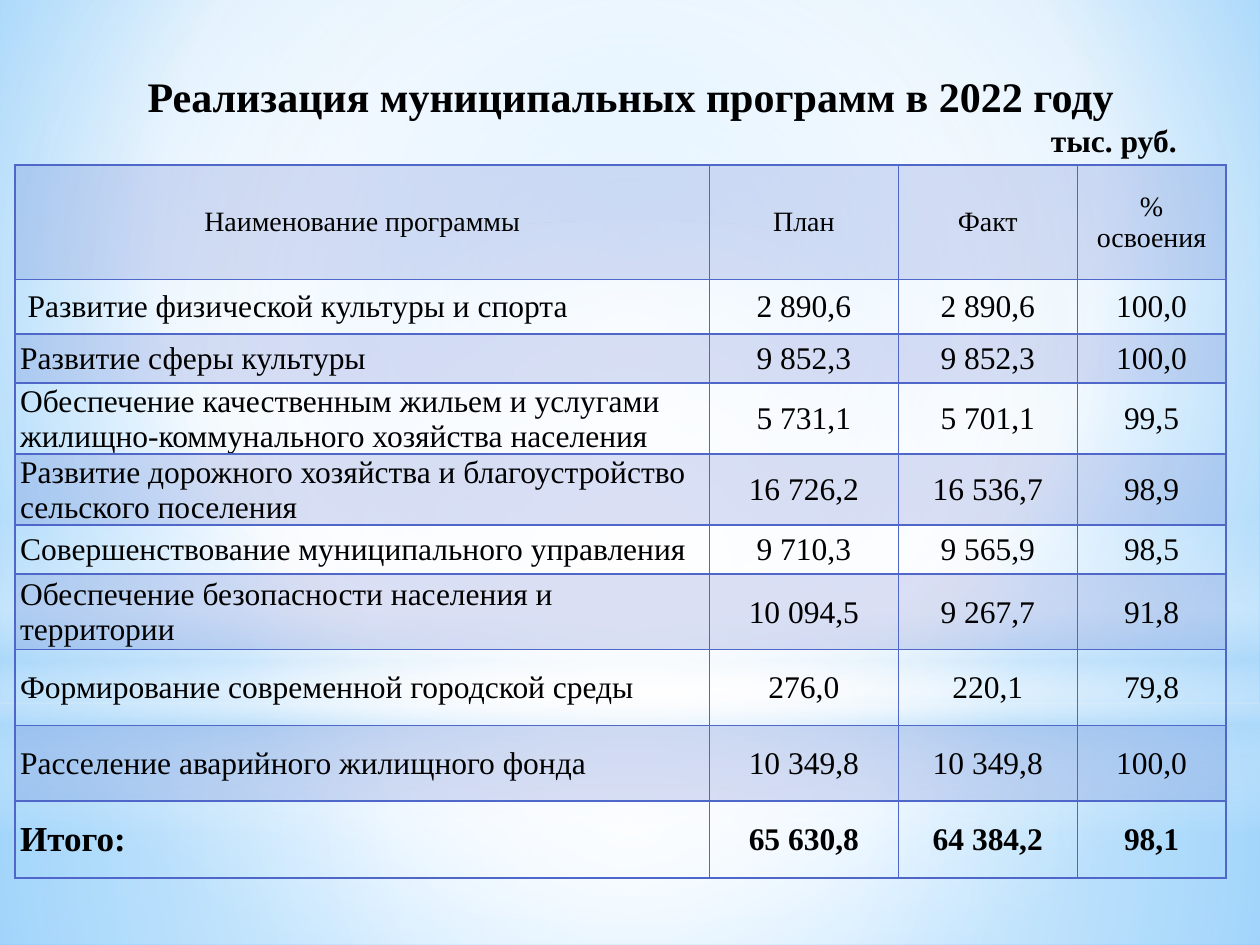
"""Build a slide with a table of municipal programme spending for 2022."""
from lxml.etree import SubElement
from pptx import Presentation
from pptx.dml.color import RGBColor
from pptx.enum.shapes import MSO_SHAPE
from pptx.enum.text import MSO_ANCHOR, MSO_AUTO_SIZE, PP_ALIGN
from pptx.oxml import parse_xml
from pptx.oxml.ns import nsdecls, qn
from pptx.util import Inches, Pt

THEME = {
    "font": "Times New Roman", "ink": "000000", "line": "4E67C8", "band": 20,
    "title": 24, "head": 16, "body": 18, "total": 20,
}
TITLE = "Реализация муниципальных программ в 2022 году"
UNIT = "тыс. руб."
ROWS = [
    ("Наименование программы", "План", "Факт", "% освоения"),
    ("Развитие физической культуры и спорта", "2 890,6", "2 890,6", "100,0"),
    ("Развитие сферы культуры", "9 852,3", "9 852,3", "100,0"),
    ("Обеспечение качественным жильем и услугами жилищно-коммунального хозяйства населения",
     "5 731,1", "5 701,1", "99,5"),
    ("Развитие дорожного хозяйства и благоустройство сельского поселения",
     "16 726,2", "16 536,7", "98,9"),
    ("Совершенствование муниципального управления", "9 710,3", "9 565,9", "98,5"),
    ("Обеспечение безопасности населения и территории", "10 094,5", "9 267,7", "91,8"),
    ("Формирование современной городской среды", "276,0", "220,1", "79,8"),
    ("Расселение аварийного жилищного фонда", "10 349,8", "10 349,8", "100,0"),
    ("Итого:", "65 630,8", "64 384,2", "98,1"),
]
WIDTHS = [5.51, 1.5, 1.42, 1.18]
HEIGHTS = [0.91, 0.43, 0.39, 0.46, 0.46, 0.39, 0.6, 0.6, 0.6, 0.61]
MID = (50, 50, 50, 50)
SKY = ([(0, "9ED5FF", 100), (60, "FFFFFF", 100), (100, "5BB9FF", 100)], (20, 10, 20, 60))
GLOWS = [
    (MSO_SHAPE.RECTANGLE, 5.58, 1.92,
     [(0, "FFFFFF", 91), (37, "FFFFFF", 76), (100, "B4DCFA", 79)], MID),
    (MSO_SHAPE.RECTANGLE, 0, 5.58,
     [(0, "FFFFFF", 89), (48, "FFFFFF", 62), (100, "B4DCFA", 79)], MID),
    (MSO_SHAPE.RECTANGLE, 4.12, 2.5,
     [(0, "FFFFFF", 0), (29, "FFFFFF", 30), (45, "B4DCFA", 40),
      (55, "FFFFFF", 26), (65, "B4DCFA", 60), (100, "FFFFFF", 0)], None),
    (MSO_SHAPE.OVAL, 1.75, 5.58, [(0, "FFFFFF", 100), (56, "FFFFFF", 0)], MID),
]


def blend(owner, stops, focus):
    marks = "".join(
        f'<a:gs pos="{pos * 1000}"><a:srgbClr val="{tint}">'
        f'<a:alpha val="{alpha * 1000}"/></a:srgbClr></a:gs>'
        for pos, tint, alpha in stops)
    if focus:
        sides = " ".join(f'{side}="{part * 1000}"' for side, part in zip("ltrb", focus))
        way = f'<a:path path="circle"><a:fillToRect {sides}/></a:path>'
    else:
        way = '<a:lin ang="5400000" scaled="0"/>'
    grad = parse_xml(f'<a:gradFill {nsdecls("a")} rotWithShape="1">'
                     f'<a:gsLst>{marks}</a:gsLst>{way}</a:gradFill>')
    owner.replace(owner.find(qn("a:solidFill")), grad)


def write(para, text, size, align, bold=False):
    para.alignment = align
    run = para.add_run()
    run.text = text
    font = run.font
    font.name, font.size, font.bold = THEME["font"], Pt(size), bold
    font.color.rgb = RGBColor.from_string(THEME["ink"])


def inset(box, left, top, right, bottom):
    box.margin_left, box.margin_top = Inches(left), Inches(top)
    box.margin_right, box.margin_bottom = Inches(right), Inches(bottom)


def paint(slide):
    slide.background.fill.solid()
    blend(slide.element.find(".//" + qn("p:bgPr")), *SKY)
    for kind, top, height, stops, focus in GLOWS:
        glow = slide.shapes.add_shape(kind, 0, Inches(top), Inches(10), Inches(height))
        glow.shadow.inherit = False
        glow.line.fill.background()
        glow.fill.solid()
        blend(glow.element.spPr, stops, focus)


def head(slide):
    title = slide.shapes.title
    slide.shapes.element.append(title.element)
    title.left, title.top = Inches(0.55), Inches(0.47)
    title.width, title.height = Inches(8.91), Inches(0.47)
    frame = title.text_frame
    frame.word_wrap, frame.auto_size = True, MSO_AUTO_SIZE.NONE
    frame.vertical_anchor = MSO_ANCHOR.TOP
    inset(frame, 0.12, 0.09, 0.12, 0)
    write(frame.paragraphs[0], TITLE, THEME["title"], PP_ALIGN.CENTER, True)
    write(frame.add_paragraph(), UNIT, THEME["body"], PP_ALIGN.RIGHT, True)


def style(cell, row):
    props = cell._tc.get_or_add_tcPr()
    if row % 2 == 0:
        cell.fill.solid()
        cell.fill.fore_color.rgb = RGBColor.from_string(THEME["line"])
        SubElement(props.find(".//" + qn("a:srgbClr")), qn("a:alpha"),
                   val=str(THEME["band"] * 1000))
    else:
        cell.fill.background()
    for spot, side in enumerate("LRTB"):
        props.insert(spot, parse_xml(
            f'<a:ln{side} {nsdecls("a")} w="{Pt(1)}"><a:solidFill>'
            f'<a:srgbClr val="{THEME["line"]}"/></a:solidFill></a:ln{side}>'))


def grid(slide):
    table = slide.shapes.add_table(
        len(ROWS), len(WIDTHS), Inches(0.12), Inches(1.31),
        Inches(sum(WIDTHS)), Inches(sum(HEIGHTS))).table
    table.first_row = table.horz_banding = False
    for col, width in zip(table.columns, WIDTHS):
        col.width = Inches(width)
    last = len(ROWS) - 1
    for row, texts in enumerate(ROWS):
        table.rows[row].height = Inches(HEIGHTS[row])
        for col, text in enumerate(texts):
            cell = table.cell(row, col)
            cell.vertical_anchor = MSO_ANCHOR.MIDDLE
            if row < 2:
                inset(cell, 0.1, 0.05, 0.1, 0.05)
            else:
                inset(cell, 0.01 if col else 0.04, 0.01, 0.01, 0)
            role = "head" if row == 0 else "total" if row == last and col == 0 else "body"
            align = PP_ALIGN.LEFT if row and col == 0 else PP_ALIGN.CENTER
            write(cell.text_frame.paragraphs[0], text, THEME[role], align, row == last)
            style(cell, row)


def main():
    deck = Presentation()
    deck.slide_width, deck.slide_height = Inches(10), Inches(7.5)
    slide = deck.slides.add_slide(deck.slide_layouts[5])
    paint(slide)
    head(slide)
    grid(slide)
    deck.save("out.pptx")


if __name__ == "__main__":
    main()
